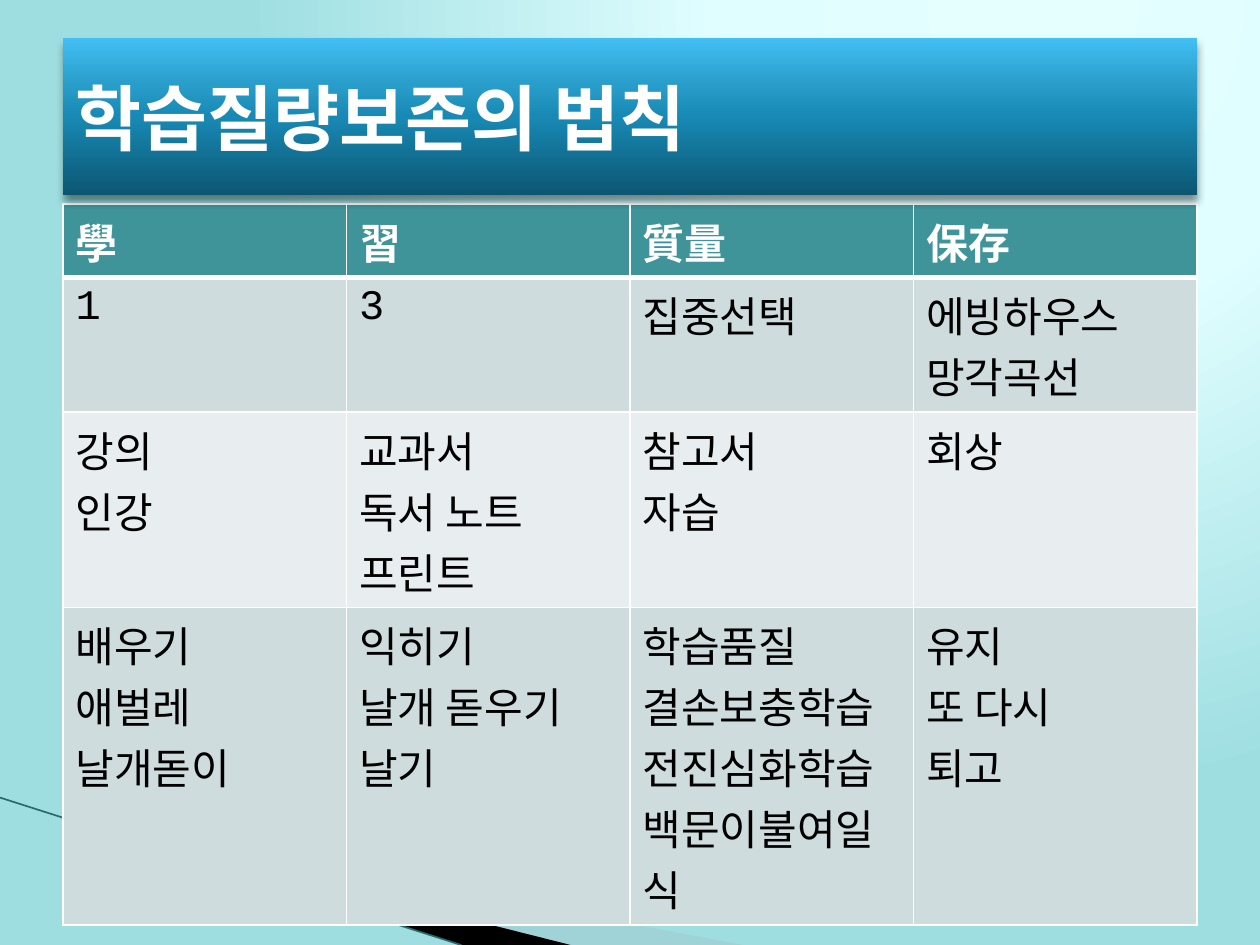
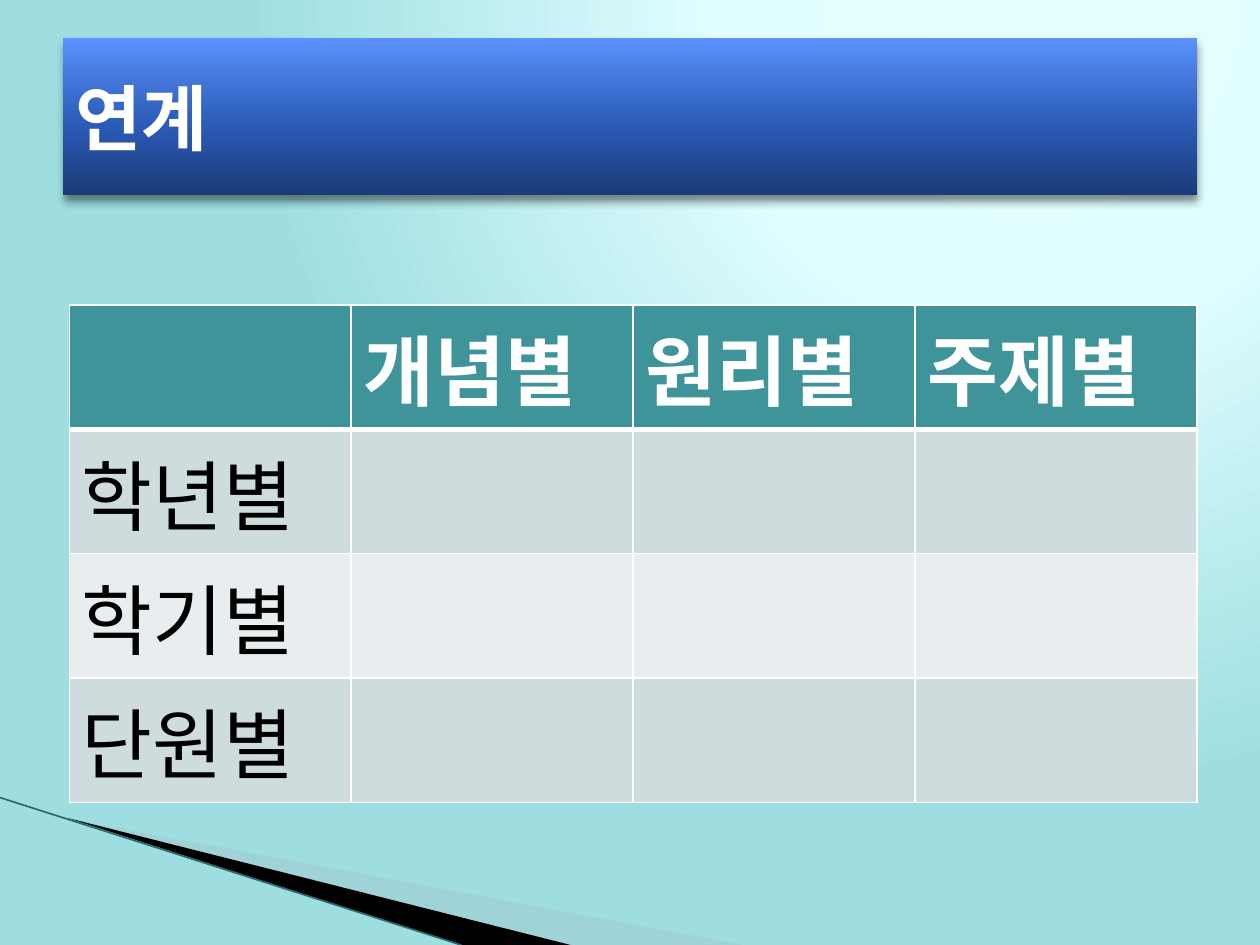
from dataclasses import dataclass

from pptx import Presentation
from pptx.dml.color import RGBColor as Color
from pptx.enum.shapes import MSO_CONNECTOR as Connector
from pptx.enum.text import MSO_ANCHOR as Anchor, MSO_AUTO_SIZE as AutoSize, PP_ALIGN as Align
from pptx.oxml import parse_xml
from pptx.oxml.ns import nsdecls, qn
from pptx.util import Inches, Pt


@dataclass(frozen=True)
class Theme:
    font: str = "Courier New"
    title_size: int = 41
    white: str = "FFFFFF"
    black: str = "000000"
    header: str = "3F949A"
    bands: tuple = ("CFDCDE", "E8EEEF")
    ribbon: str = "A4C4C8"
    ribbon_edge: str = "286A70"
    backdrop: tuple = ((0, "E5FEFF"), (40, "E0FEFF"), (100, "9EDEE1"))
    sky: tuple = ((0, "0C5672"), (50, "1889B4"), (70, "299DCA"), (100, "42BFF3"))
    royal: tuple = ((0, "1A3A78"), (50, "2E5FBD"), (70, "4174D6"), (100, "5C92FF"))
    thin: float = 1
    thick: float = 3


theme = Theme()
namespace = nsdecls("a")


def gradient(stops, direction):
    marks = "".join(
        f'<a:gs pos="{percent * 1000}"><a:srgbClr val="{color}"/></a:gs>'
        for percent, color in stops
    )
    return parse_xml(
        f'<a:gradFill {namespace} rotWithShape="1"><a:gsLst>{marks}</a:gsLst>{direction}</a:gradFill>'
    )


def style_font(font, size, color, bold):
    font.name = theme.font
    font.size = Pt(size)
    font.bold = bold
    font.color.rgb = Color.from_string(color)


pages = [
    {
        "title": "학습질량보존의 법칙",
        "title_fill": theme.sky,
        "table_box": (0.5, 1.62, 9, 4.8),
        "row_height": 0.41,
        "text_size": 24,
        "rows": [
            ["學", "習", "質量", "保存"],
            ["1", "3", "집중선택", "에빙하우스\n망각곡선"],
            ["강의\n인강", "교과서\n독서 노트\n프린트", "참고서\n자습", "회상"],
            [
                "배우기\n애벌레\n날개돋이",
                "익히기\n날개 돋우기 날기",
                "학습품질\n결손보충학습\n전진심화학습\n백문이불여일식",
                "유지\n또 다시\n퇴고",
            ],
        ],
    },
    {
        "title": "연계",
        "title_fill": theme.royal,
        "table_box": (0.55, 2.42, 8.95, 3.33),
        "row_height": 0.67,
        "text_size": 44,
        "rows": [
            ["", "개념별", "원리별", "주제별"],
            ["학년별", "", "", ""],
            ["학기별", "", "", ""],
            ["단원별", "", "", ""],
        ],
    },
]

deck = Presentation()
deck.slide_width, deck.slide_height = Inches(10), Inches(7.5)
title_only = deck.slide_layouts[5]
slides = [deck.slides.add_slide(title_only) for page in pages]

master = deck.slide_master
master.background.fill.solid()
background = master.element.cSld.find(qn("p:bg")).find(qn("p:bgPr"))
glow = '<a:path path="circle"><a:fillToRect l="65000" t="0" r="0" b="98000"/></a:path>'
background.replace(background.find(qn("a:solidFill")), gradient(theme.backdrop, glow))

canvas = slides[0].shapes
decorations = []
ribbons = [
    (theme.ribbon, 40, [(0.55, 6.5), (5.9, 7.5), (4.52, 7.5)]),
    (theme.black, 100, [(0.53, 6.49), (4.53, 7.5), (3.67, 7.5)]),
]
for color, opacity, corners in ribbons:
    start, *others = [(Inches(x), Inches(y)) for x, y in corners]
    outline = canvas.build_freeform(*start)
    outline.add_line_segments(others, close=True)
    ribbon = outline.convert_to_shape()
    ribbon.shadow.inherit = False
    ribbon.line.fill.background()
    ribbon.fill.solid()
    ribbon.fill.fore_color.rgb = Color.from_string(color)
    ribbon_color = ribbon.element.spPr.find(qn("a:solidFill")).find(qn("a:srgbClr"))
    ribbon_color.append(parse_xml(f'<a:alpha {namespace} val="{opacity * 1000}"/>'))
    decorations.append(ribbon)

edge = canvas.add_connector(
    Connector.STRAIGHT, Inches(0), Inches(6.33), Inches(3.66), Inches(7.5)
)
edge.line.color.rgb = Color.from_string(theme.ribbon_edge)
edge.line.width = Pt(0.95)
edge.element.spPr.append(parse_xml(f"<a:effectLst {namespace}/>"))
decorations.append(edge)

for decoration in decorations:
    master.element.cSld.spTree.append(decoration.element)

for slide, page in zip(slides, pages):
    rows = page["rows"]
    left, top, width, height = map(Inches, page["table_box"])
    frame = slide.shapes.add_table(len(rows), len(rows[0]), left, top, width, height)
    for row in frame.table.rows:
        row.height = Inches(page["row_height"])
    frame.height = height

    for row_index, texts in enumerate(rows):
        is_header = row_index == 0
        fill_color = theme.header if is_header else theme.bands[(row_index - 1) % 2]
        text_color = theme.white if is_header else theme.black
        borders = {
            "lnL": theme.thin,
            "lnR": theme.thin,
            "lnT": theme.thick if row_index == 1 else theme.thin,
            "lnB": theme.thick if is_header else theme.thin,
        }
        for column_index, text in enumerate(texts):
            cell = frame.table.cell(row_index, column_index)
            cell_properties = cell._tc.get_or_add_tcPr()
            for side, points in borders.items():
                cell_properties.append(parse_xml(
                    f'<a:{side} {namespace} w="{Pt(points)}"><a:solidFill>'
                    f'<a:srgbClr val="{theme.white}"/></a:solidFill></a:{side}>'
                ))
            cell.fill.solid()
            cell.fill.fore_color.rgb = Color.from_string(fill_color)
            cell.text = text
            for para in cell.text_frame.paragraphs:
                if para.text:
                    style_font(para.font, page["text_size"], text_color, is_header)

    title = slide.shapes.title
    title.left, title.top, title.width, title.height = map(Inches, (0.5, 0.3, 9, 1.25))
    title_properties = title.element.spPr
    title_properties.append(gradient(page["title_fill"], '<a:lin ang="16200000" scaled="0"/>'))
    title_properties.append(parse_xml(
        f'<a:effectLst {namespace}><a:outerShdw blurRad="{Pt(5)}" dist="{Pt(3)}" dir="5400000" '
        f'rotWithShape="0"><a:srgbClr val="{theme.black}"><a:alpha val="45000"/></a:srgbClr>'
        "</a:outerShdw></a:effectLst>"
    ))
    title_text = title.text_frame
    title_text.text = page["title"]
    title_text.auto_size = AutoSize.NONE
    title_text.vertical_anchor = Anchor.MIDDLE
    heading = title_text.paragraphs[0]
    heading.alignment = Align.LEFT
    style_font(heading.font, theme.title_size, theme.white, True)
    frame.element.addnext(title.element)

deck.save("out.pptx")
